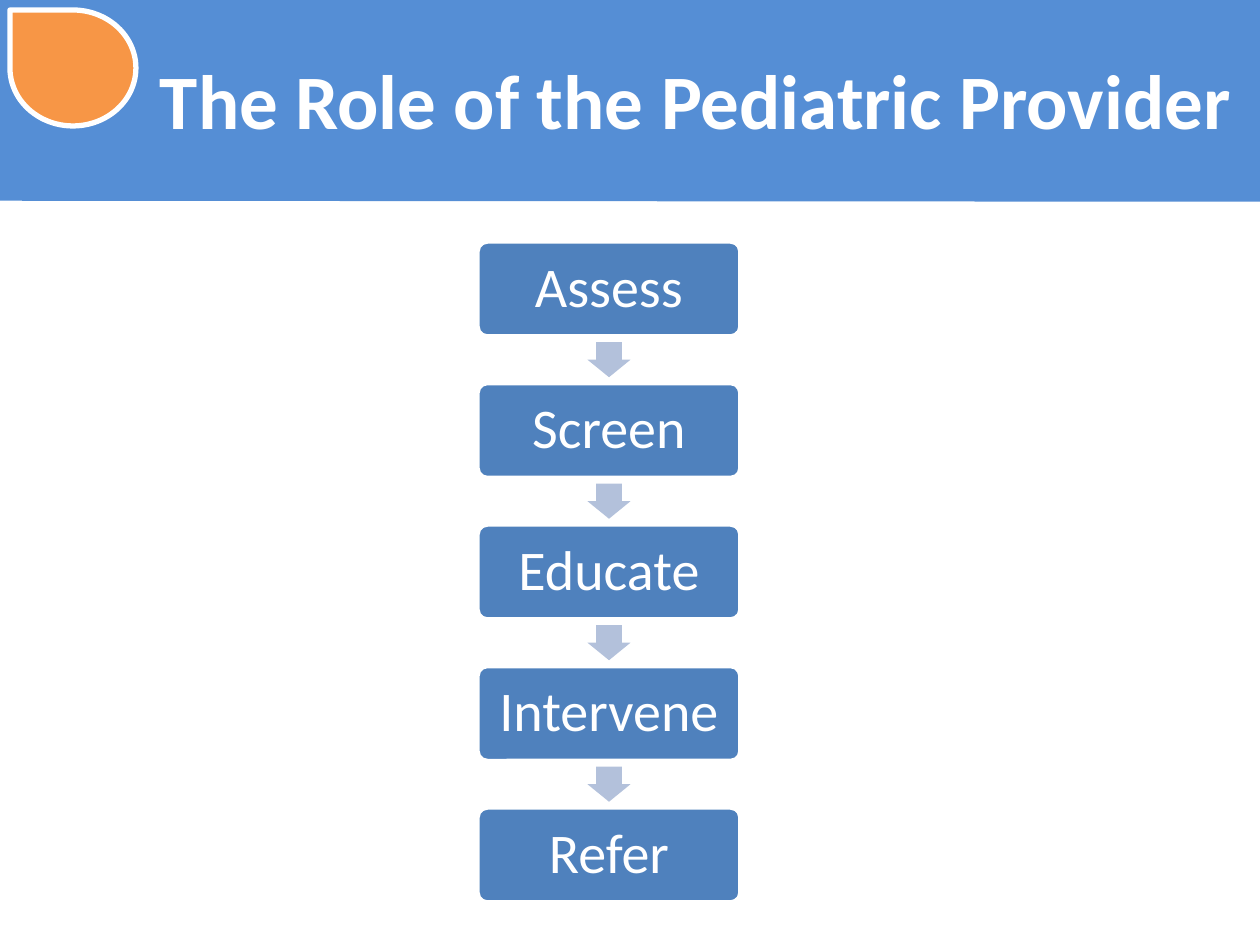
import pptx
import pptx.dml.color
import pptx.enum.shapes
import pptx.enum.text
import pptx.util
from lxml import etree

SCALE = 914400 / 126
KIND = pptx.enum.shapes.MSO_SHAPE
ALIGN = pptx.enum.text.PP_ALIGN
THEME = {
    "font": "Calibri", "title": 44, "step": 32,
    "band": "558ED5", "drop": "F79646", "box": "4F81BD",
    "arrow": "B3C1DB", "white": "FFFFFF",
}


def px(size):
    """Turn px into EMU."""
    return pptx.util.Emu(round(size * SCALE))


def tint(name):
    """Return a theme colour."""
    return pptx.dml.color.RGBColor.from_string(THEME[name])


def assign(target, values):
    """Set attributes from a dict of format values."""
    for name, value in values.items():
        setattr(target, name, value)


def stroke(line, color, width):
    """Give a line its colour and its width in points."""
    line.color.rgb = tint(color)
    line.width = pptx.util.Pt(width)


def shape(slide, kind, box, fill, width=0, adjust=()):
    """Add a filled preset shape with an optional white edge."""
    item = slide.shapes.add_shape(kind, *map(px, box))
    item.shadow.inherit = False
    item.fill.solid()
    item.fill.fore_color.rgb = tint(fill)
    for index, value in enumerate(adjust):
        item.adjustments[index] = value
    if width:
        stroke(item.line, "white", width)
    else:
        item.line.fill.background()
    return item


def write(item, text, size, align, inset, bold=False, leading=1.0):
    """Put one white line of text in a shape, centred on its height."""
    frame = item.text_frame
    assign(frame, {
        "word_wrap": True,
        "vertical_anchor": pptx.enum.text.MSO_ANCHOR.MIDDLE,
        "margin_left": px(inset), "margin_right": px(inset),
    })
    line = frame.paragraphs[0]
    line.text = text
    assign(line, {"alignment": align, "line_spacing": leading})
    assign(line.font, {"name": THEME["font"], "bold": bold,
                       "size": pptx.util.Pt(THEME[size])})
    line.font.color.rgb = tint("white")


def header(slide, box, title):
    """Draw the title band with its teardrop and lower rule."""
    left, top, width, height = box
    shape(slide, KIND.RECTANGLE, box, "band")
    drop = shape(slide, KIND.TEAR, (left + 10, top + 10, 126, 116), "drop", 3)
    drop._element.spPr.xfrm.set("flipH", "1")
    base = top + height
    rule = slide.shapes.add_connector(
        pptx.enum.shapes.MSO_CONNECTOR.STRAIGHT,
        *map(px, (left, base, left + width, base + 1)))
    stroke(rule.line, "band", 2)
    etree.SubElement(rule._element.spPr, pptx.oxml.ns.qn("a:effectLst"))
    label = slide.shapes.add_textbox(
        *map(px, (left + 147, top + 20, 1176, 158)))
    write(label, title, "title", ALIGN.LEFT, 13, bold=True)


def flow(slide, box, steps):
    """Stack the steps evenly with an arrow in each gap."""
    left, top, width, height = box
    tall, long, wide = 94, 35, 43
    pitch = (height - tall) / (len(steps) - 1)
    for index, step in enumerate(steps):
        place = top + index * pitch
        if index:
            middle = place - (pitch - tall) / 2
            arrow = shape(slide, KIND.RIGHT_ARROW,
                          (left + (width - long) / 2, middle - wide / 2,
                           long, wide), "arrow", adjust=(0.6, 0.5))
            arrow.rotation = 90
        card = shape(slide, KIND.ROUNDED_RECTANGLE,
                     (left, place, width, tall), "box", 2, (0.1,))
        write(card, step, "step", ALIGN.CENTER, 12, leading=0.9)


def main():
    """Build and save the slide."""
    deck = pptx.Presentation()
    assign(deck, {"slide_width": px(1260), "slide_height": px(945)})
    slide = deck.slides.add_slide(deck.slide_layouts[6])
    header(slide, (0, 0, 1260, 199), "The Role of the Pediatric Provider")
    flow(slide, (478, 242, 262, 660),
         ["Assess", "Screen", "Educate", "Intervene", "Refer"])
    deck.save("out.pptx")


if __name__ == "__main__":
    main()
